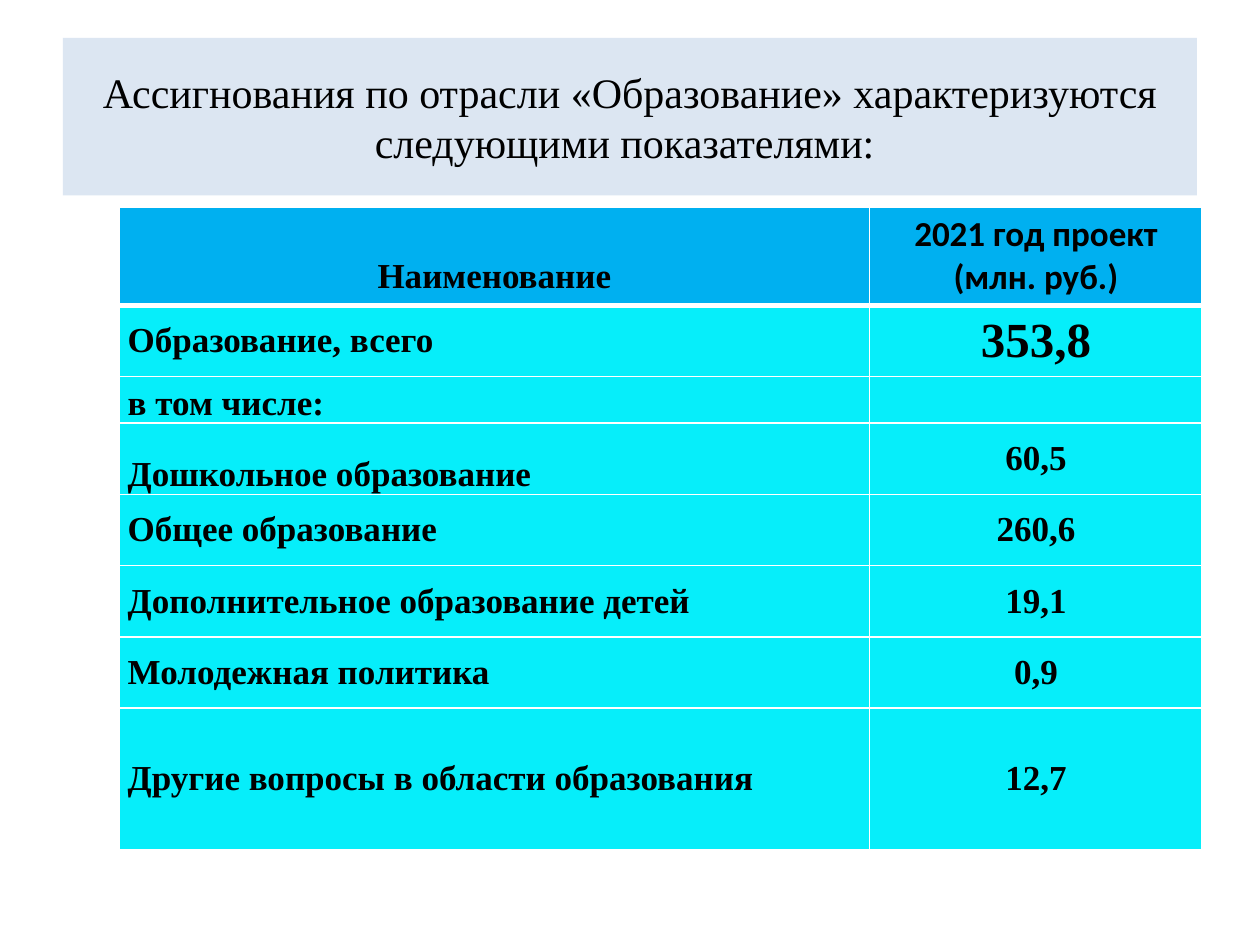
from dataclasses import dataclass

from lxml import etree
from pptx import Presentation
from pptx.dml.color import RGBColor
from pptx.enum.shapes import MSO_SHAPE
from pptx.enum.text import MSO_ANCHOR, PP_ALIGN
from pptx.oxml.ns import qn
from pptx.slide import Slide
from pptx.util import Pt

RECTANGLE = MSO_SHAPE.RECTANGLE
MIDDLE, BOTTOM = MSO_ANCHOR.MIDDLE, MSO_ANCHOR.BOTTOM
LEFT, CENTER, JUSTIFY = PP_ALIGN.LEFT, PP_ALIGN.CENTER, PP_ALIGN.JUSTIFY

COLORS = {"title": "DCE6F2", "header": "00B0F0", "body": "06EEFA", "line": "FFFFFF", "text": "000000"}
SERIF, SANS = "Times New Roman", "Calibri"
TITLE = "Ассигнования по отрасли «Образование» характеризуются следующими показателями: "
HEADER_NAME = "Наименование"
HEADER_VALUE = ["2021 год проект", "(млн. руб.)"]
ROWS = [
    ("Образование, всего", "353,8", 40.75, MIDDLE, LEFT, 28),
    ("в том числе:", "", 26.6, BOTTOM, LEFT, 20),
    ("Дошкольное образование", "60,5", 40.75, BOTTOM, LEFT, 20),
    ("Общее образование", "260,6", 40.75, MIDDLE, LEFT, 20),
    ("Дополнительное образование детей", "19,1", 40.75, MIDDLE, LEFT, 20),
    ("Молодежная политика", "0,9", 40.75, MIDDLE, LEFT, 20),
    ("Другие вопросы в области образования", "12,7", 80.9, MIDDLE, JUSTIFY, 20),
]
HEADER_HEIGHT = 56
COLUMN_WIDTHS = [429, 190]


@dataclass
class SlideBuilder:
    """Draws styled elements on the current slide."""

    slide: Slide
    size: int = 20
    font: str = SERIF

    def add_text(self, frame, lines, align, size=None, font=None, bold=True):
        for index, line in enumerate(lines):
            para = frame.paragraphs[0] if index == 0 else frame.add_paragraph()
            para.alignment = align
            span = para.add_run()
            span.text = line
            span.font.size = Pt(size or self.size)
            span.font.name = font or self.font
            span.font.bold = bold
            span.font.color.rgb = RGBColor.from_string(COLORS["text"])

    def title(self, text, left, top, width, height):
        box = self.slide.shapes.add_shape(RECTANGLE, Pt(left), Pt(top), Pt(width), Pt(height))
        box.shadow.inherit = False
        box.fill.solid()
        box.fill.fore_color.rgb = RGBColor.from_string(COLORS["title"])
        box.line.fill.background()
        box.text_frame.word_wrap = True
        box.text_frame.vertical_anchor = MIDDLE
        self.add_text(box.text_frame, [text], CENTER, size=24, bold=False)

    def table(self, left, top, widths, heights):
        frame = self.slide.shapes.add_table(
            len(heights), len(widths), Pt(left), Pt(top), Pt(sum(widths)), Pt(sum(heights)))
        for column, width in zip(frame.table.columns, widths):
            column.width = Pt(width)
        for row, height in zip(frame.table.rows, heights):
            row.height = Pt(height)
        return frame.table

    def cell(self, cell, lines, fill, align=CENTER, anchor=MIDDLE, margins=(5, 0, 5, 0),
             top_line=1, bottom_line=1, **style):
        cell.margin_left, cell.margin_top, cell.margin_right, cell.margin_bottom = map(Pt, margins)
        cell.vertical_anchor = anchor
        cell.fill.solid()
        cell.fill.fore_color.rgb = RGBColor.from_string(COLORS[fill])
        self.borders(cell, {"a:lnL": 1, "a:lnR": 1, "a:lnT": top_line, "a:lnB": bottom_line})
        self.add_text(cell.text_frame, lines, align, **style)

    def borders(self, cell, widths):
        properties = cell._tc.get_or_add_tcPr()
        for index, (side, width) in enumerate(widths.items()):
            line = etree.Element(qn(side), w=str(Pt(width)))
            fill = etree.SubElement(line, qn("a:solidFill"))
            etree.SubElement(fill, qn("a:srgbClr"), val=COLORS["line"])
            properties.insert(index, line)


def main():
    deck = Presentation()
    deck.slide_width, deck.slide_height = Pt(720), Pt(540)
    page = SlideBuilder(deck.slides.add_slide(deck.slide_layouts[6]))
    page.title(TITLE, 36, 21.6, 648, 90)

    table = page.table(68, 118.2, COLUMN_WIDTHS, [HEADER_HEIGHT] + [row[2] for row in ROWS])
    page.cell(table.cell(0, 0), [HEADER_NAME], "header", anchor=BOTTOM,
              margins=(1, 1, 1, 5), bottom_line=3)
    page.cell(table.cell(0, 1), HEADER_VALUE, "header",
              margins=(7.2, 3.6, 7.2, 3.6), bottom_line=3, font=SANS)
    for index, (name, value, _, anchor, align, size) in enumerate(ROWS, 1):
        top_line = 3 if index == 1 else 1
        page.cell(table.cell(index, 0), [name], "body", align, anchor, top_line=top_line)
        page.cell(table.cell(index, 1), [value] if value else [], "body",
                  top_line=top_line, size=size)
    deck.save("out.pptx")


if __name__ == "__main__":
    main()
